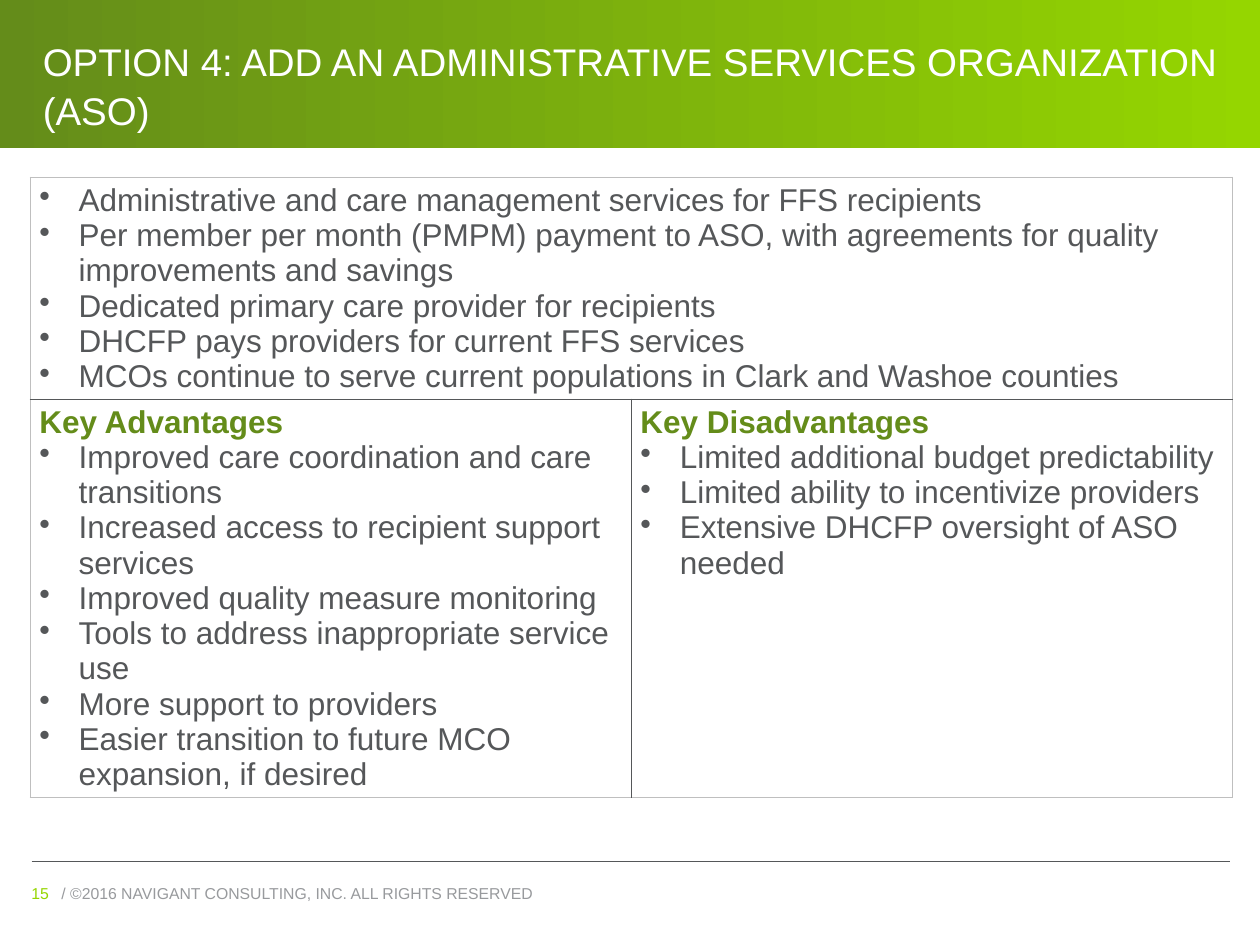
"""Builds the slide on option 4, adding an administrative services organization."""
import pptx
import pptx.dml.color
import pptx.enum.shapes
import pptx.enum.text
import pptx.oxml
import pptx.oxml.ns
import pptx.oxml.xmlchemy
import pptx.util
from dataclasses import dataclass

Pt = pptx.util.Pt

TITLE = "OPTION 4: ADD AN ADMINISTRATIVE SERVICES ORGANIZATION (ASO)"
SUMMARY = [
    "Administrative and care management services for FFS recipients",
    "Per member per month (PMPM) payment to ASO, with agreements for quality improvements and savings",
    "Dedicated primary care provider for recipients",
    "DHCFP pays providers for current FFS services",
    "MCOs continue to serve current populations in Clark and Washoe counties",
]
COLUMNS = [
    ("Key Advantages", [
        "Improved care coordination and care transitions",
        "Increased access to recipient support services",
        "Improved quality measure monitoring",
        "Tools to address inappropriate service use",
        "More support to providers",
        "Easier transition to future MCO expansion, if desired",
    ]),
    ("Key Disadvantages", [
        "Limited additional budget predictability",
        "Limited ability to incentivize providers",
        "Extensive DHCFP oversight of ASO needed",
    ]),
]
PAGE_NUMBER = "15"
COPYRIGHT = "/ ©2016 NAVIGANT CONSULTING, INC. ALL RIGHTS RESERVED"


@dataclass(frozen=True)
class Theme:
    font: str = "Arial"
    dark_green: str = "648C1A"
    lime: str = "95D600"
    white: str = "FFFFFF"
    body: str = "555759"
    footer: str = "989A9D"
    frame: str = "BFBFBF"
    title_size: float = 22
    body_size: float = 18
    footer_size: float = 9


THEME = Theme()
PAGE_WIDTH, PAGE_HEIGHT = 720, 540
BAND_HEIGHT = 84.5
TABLE_LEFT, TABLE_TOP, COLUMN_WIDTH = 17.3, 101.5, 343.5
ROW_HEIGHTS = [126, 227]
CELL_INSETS = {"margin_left": 5.2, "margin_right": 5.2, "margin_top": 2.9, "margin_bottom": 2.9}
BULLET_INDENT = 22.5


def rgb(value):
    return pptx.dml.color.RGBColor.from_string(value)


def add_span(para, text, size, color, bold=False):
    span = para.add_run()
    span.text = text
    span.font.name = THEME.font
    span.font.size = Pt(size)
    span.font.bold = bold
    span.font.color.rgb = rgb(color)


def remove_shadow(connector):
    connector._element.spPr.append(pptx.oxml.xmlchemy.OxmlElement("a:effectLst"))


def set_bullet(para):
    properties = para._p.get_or_add_pPr()
    properties.set("marL", str(int(Pt(BULLET_INDENT))))
    properties.set("indent", str(-int(Pt(BULLET_INDENT))))
    bullet = pptx.oxml.xmlchemy.OxmlElement("a:buChar")
    bullet.set("char", "•")
    properties.append(bullet)


def set_borders(cell, colors):
    properties = cell._tc.get_or_add_tcPr()
    for index, (side, color) in enumerate(zip("LRTB", colors)):
        properties.insert(index, pptx.oxml.parse_xml(
            f'<a:ln{side} {pptx.oxml.ns.nsdecls("a")} w="{int(Pt(1))}"><a:solidFill>'
            f'<a:srgbClr val="{color}"/></a:solidFill></a:ln{side}>'))


def fill_cell(cell, heading, bullets):
    for name, inset in CELL_INSETS.items():
        setattr(cell, name, Pt(inset))
    frame = cell.text_frame
    lines = ([(heading, True)] if heading else []) + [(text, False) for text in bullets]
    for index, (text, is_heading) in enumerate(lines):
        para = frame.add_paragraph() if index else frame.paragraphs[0]
        if not is_heading:
            set_bullet(para)
        add_span(para, text, THEME.body_size,
                 THEME.dark_green if is_heading else THEME.body, is_heading)


def add_band(page):
    band = page.shapes.add_shape(pptx.enum.shapes.MSO_SHAPE.RECTANGLE,
                                 0, 0, Pt(PAGE_WIDTH), Pt(BAND_HEIGHT))
    band.shadow.inherit = False
    band.line.fill.background()
    band.fill.gradient()
    band.fill.gradient_angle = 0
    for stop, color in zip(band.fill.gradient_stops, (THEME.dark_green, THEME.lime)):
        stop.color.rgb = rgb(color)
    page.shapes._spTree.insert(2, band._element)


def add_title(page):
    title = page.shapes.title
    title.left, title.top, title.width, title.height = Pt(17.3), Pt(0), Pt(686), Pt(80)
    frame = title.text_frame
    frame.word_wrap = True
    frame.auto_size = pptx.enum.text.MSO_AUTO_SIZE.NONE
    frame.vertical_anchor = pptx.enum.text.MSO_ANCHOR.BOTTOM
    para = frame.paragraphs[0]
    para.alignment = pptx.enum.text.PP_ALIGN.LEFT
    para.line_spacing = 1.07
    add_span(para, TITLE, THEME.title_size, THEME.white)


def add_comparison(page):
    table = page.shapes.add_table(
        len(ROW_HEIGHTS), len(COLUMNS), Pt(TABLE_LEFT), Pt(TABLE_TOP),
        Pt(COLUMN_WIDTH * len(COLUMNS)), Pt(sum(ROW_HEIGHTS))).table
    table.first_row = table.horz_banding = False
    for column in table.columns:
        column.width = Pt(COLUMN_WIDTH)
    for row, height in zip(table.rows, ROW_HEIGHTS):
        row.height = Pt(height)
    table.cell(0, 0).merge(table.cell(0, 1))
    fill_cell(table.cell(0, 0), None, SUMMARY)
    for index, (heading, bullets) in enumerate(COLUMNS):
        fill_cell(table.cell(1, index), heading, bullets)
    outer, inner = THEME.frame, THEME.body
    for cell in table.iter_cells():
        cell.fill.background()
    set_borders(table.cell(0, 0), (outer, outer, outer, inner))
    set_borders(table.cell(0, 1), (outer, outer, outer, inner))
    set_borders(table.cell(1, 0), (outer, inner, inner, outer))
    set_borders(table.cell(1, 1), (inner, outer, inner, outer))


def add_footer(page):
    rule = page.shapes.add_connector(pptx.enum.shapes.MSO_CONNECTOR.STRAIGHT,
                                     Pt(18), Pt(492.3), Pt(702.7), Pt(492.3))
    rule.line.color.rgb = rgb(THEME.body)
    rule.line.width = Pt(0.75)
    remove_shadow(rule)
    for text, color, left, top, width in (
            (COPYRIGHT, THEME.footer, 28, 501.7, 459),
            (PAGE_NUMBER, THEME.lime, 10.8, 501.4, 49)):
        box = page.shapes.add_textbox(Pt(left), Pt(top), Pt(width), Pt(16.5))
        box.text_frame.word_wrap = True
        add_span(box.text_frame.paragraphs[0], text, THEME.footer_size, color)


def main():
    deck = pptx.Presentation()
    deck.slide_width, deck.slide_height = Pt(PAGE_WIDTH), Pt(PAGE_HEIGHT)
    page = deck.slides.add_slide(deck.slide_layouts.get_by_name("Title Only"))
    add_band(page)
    add_title(page)
    add_comparison(page)
    add_footer(page)
    deck.save("out.pptx")


if __name__ == "__main__":
    main()
